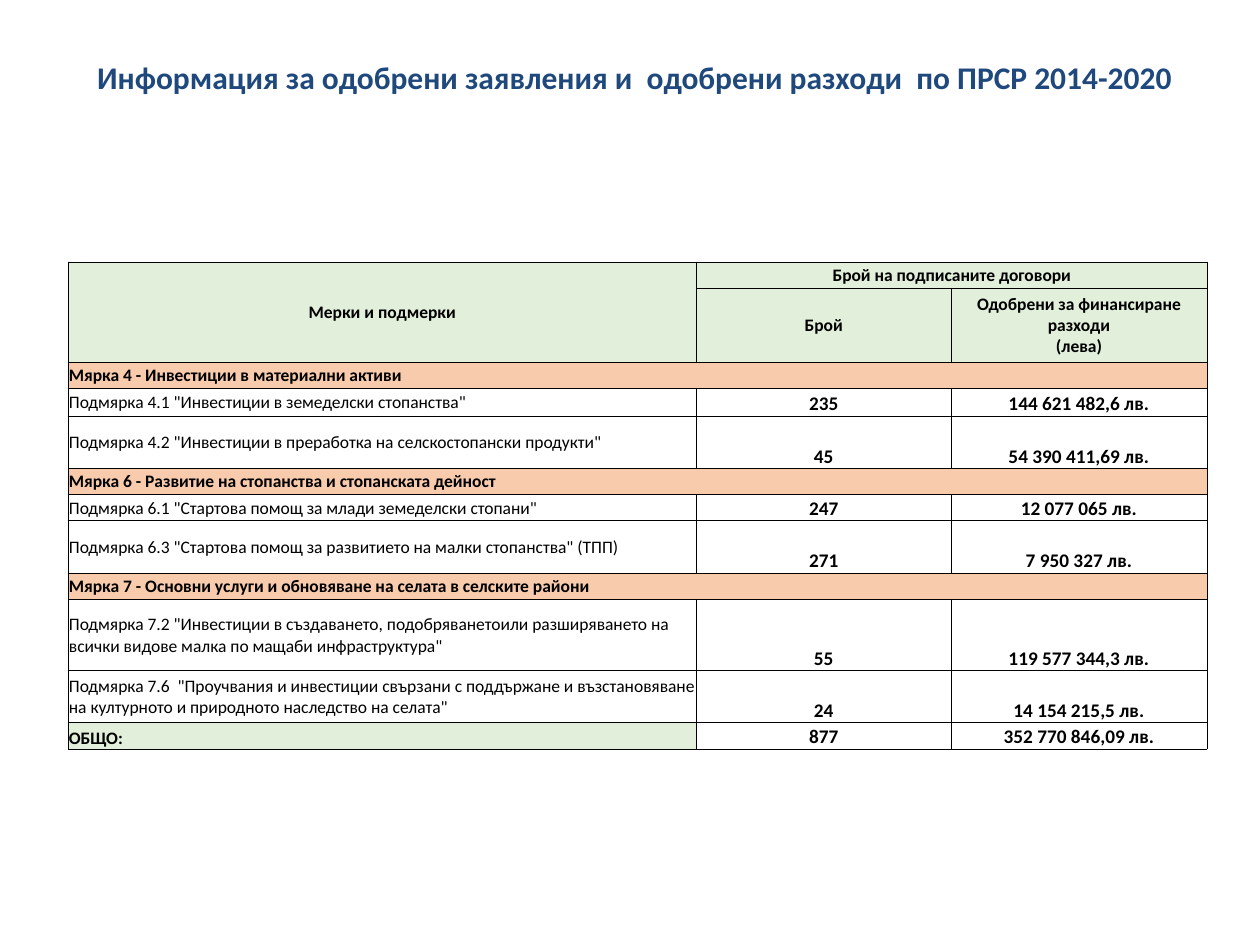
import pptx
import pptx.dml.color
import pptx.enum.text
import pptx.oxml
import pptx.oxml.ns
import pptx.util
from pptx.util import Cm, Pt

ALIGN = pptx.enum.text.PP_ALIGN
ANCHOR = pptx.enum.text.MSO_ANCHOR

NAVY, BLACK = "1F497D", "000000"
GREEN, ORANGE = "E2EFDA", "F8CBAD"

COLUMN_WIDTHS = [12.67, 5.13, 5.16]
HEADER_HEIGHTS = [0.53, 1.49]
# Each row: height in cm, then a measure alone or a submeasure with count and cost.
MEASURES = [
    (0.53, "Мярка 4 - Инвестиции в материални активи"),
    (0.56, 'Подмярка 4.1 "Инвестиции в земеделски стопанства"', "235", "144 621 482,6 лв."),
    (1.05, 'Подмярка 4.2 "Инвестиции в преработка на селскостопански продукти"',
     "45", "54 390 411,69 лв."),
    (0.53, "Мярка 6 - Развитие на стопанства и стопанската дейност"),
    (0.53, 'Подмярка 6.1 "Стартова помощ за млади земеделски стопани"',
     "247", "12 077 065 лв."),
    (1.05, 'Подмярка 6.3 "Стартова помощ за развитието на малки стопанства" (ТПП)',
     "271", "7 950 327 лв."),
    (0.53, "Мярка 7 - Основни услуги и обновяване на селата в селските райони"),
    (1.44, 'Подмярка 7.2 "Инвестиции в създаването, подобряванетоили разширяването на '
     'всички видове малка по мащаби инфраструктура"', "55", "119 577 344,3 лв."),
    (1.05, 'Подмярка 7.6  "Проучвания и инвестиции свързани с поддържане и възстановяване '
     'на културното и природното наследство на селата"', "24", "14 154 215,5 лв."),
]
TOTAL = (0.53, "ОБЩО:", "877", "352 770 846,09 лв.")


def rgb(color):
    return pptx.dml.color.RGBColor.from_string(color)


def write(text_frame, text, size, color, bold, align):
    text_frame.word_wrap = True
    paragraph = text_frame.paragraphs[0]
    paragraph.text = text
    paragraph.alignment = align
    for run in paragraph.runs:
        run.font.name = "Calibri"
        run.font.size = Pt(size)
        run.font.bold = bold
        run.font.color.rgb = rgb(color)


def frame_cell(cell):
    """Give a cell thin black borders, narrow margins and no fill."""
    properties = cell._tc.get_or_add_tcPr()
    for side in ("lnL", "lnR", "lnT", "lnB"):
        properties.append(pptx.oxml.parse_xml(
            f'<a:{side} {pptx.oxml.ns.nsdecls("a")} w="{Pt(0.5)}">'
            f'<a:solidFill><a:srgbClr val="{BLACK}"/></a:solidFill></a:{side}>'))
    cell.margin_left = cell.margin_right = cell.margin_top = Cm(0.02)
    cell.margin_bottom = 0
    cell.fill.background()


def fill_cell(cell, text, size=10, bold=True, align=ALIGN.LEFT,
              anchor=ANCHOR.MIDDLE, background=None):
    write(cell.text_frame, text, size, BLACK, bold, align)
    cell.vertical_anchor = anchor
    if background:
        cell.fill.solid()
        cell.fill.fore_color.rgb = rgb(background)


def add_title(slide, left, top, width, height):
    title = slide.shapes.add_textbox(Cm(left), Cm(top), Cm(width), Cm(height))
    write(title.text_frame, "Информация за одобрени заявления и  одобрени разходи  по ПРСР 2014-2020",
          18, NAVY, True, ALIGN.CENTER)
    title.text_frame.auto_size = pptx.enum.text.MSO_AUTO_SIZE.SHAPE_TO_FIT_TEXT


def fill_header(table):
    table.cell(0, 0).merge(table.cell(1, 0))
    table.cell(0, 1).merge(table.cell(0, 2))
    for row, column, label in [
        (0, 0, "Мерки и подмерки"),
        (0, 1, "Брой на подписаните договори"),
        (1, 1, "Брой"),
        (1, 2, "Одобрени за финансиране разходи\v(лева)"),
    ]:
        fill_cell(table.cell(row, column), label, align=ALIGN.CENTER, background=GREEN)


def fill_amounts(table, row, amounts):
    for column, amount in enumerate(amounts, 1):
        fill_cell(table.cell(row, column), amount, size=11,
                  align=ALIGN.CENTER, anchor=ANCHOR.BOTTOM)


def add_measures_table(slide, left, top):
    heights = HEADER_HEIGHTS + [measure[0] for measure in MEASURES] + [TOTAL[0]]
    table = slide.shapes.add_table(
        len(heights), len(COLUMN_WIDTHS), Cm(left), Cm(top),
        Cm(sum(COLUMN_WIDTHS)), Cm(sum(heights))).table
    table.first_row = table.horz_banding = False
    for column, width in zip(table.columns, COLUMN_WIDTHS):
        column.width = Cm(width)
    for row, height in zip(table.rows, heights):
        row.height = Cm(height)
    for cell in table.iter_cells():
        frame_cell(cell)

    fill_header(table)
    for row, (_, name, *amounts) in enumerate(MEASURES, len(HEADER_HEIGHTS)):
        if amounts:
            fill_cell(table.cell(row, 0), name, bold=False)
            fill_amounts(table, row, amounts)
        else:
            table.cell(row, 0).merge(table.cell(row, 2))
            fill_cell(table.cell(row, 0), name, background=ORANGE)

    total_row = len(heights) - 1
    fill_cell(table.cell(total_row, 0), TOTAL[1], anchor=ANCHOR.BOTTOM, background=GREEN)
    fill_amounts(table, total_row, TOTAL[2:])


def main():
    presentation = pptx.Presentation()
    presentation.slide_width = Cm(25.4)
    presentation.slide_height = Cm(19.05)
    slide = presentation.slides.add_slide(presentation.slide_layouts[6])
    add_title(slide, 1.37, 1.04, 22.86, 1.02)
    add_measures_table(slide, 1.37, 5.28)
    presentation.save("out.pptx")


if __name__ == "__main__":
    main()
